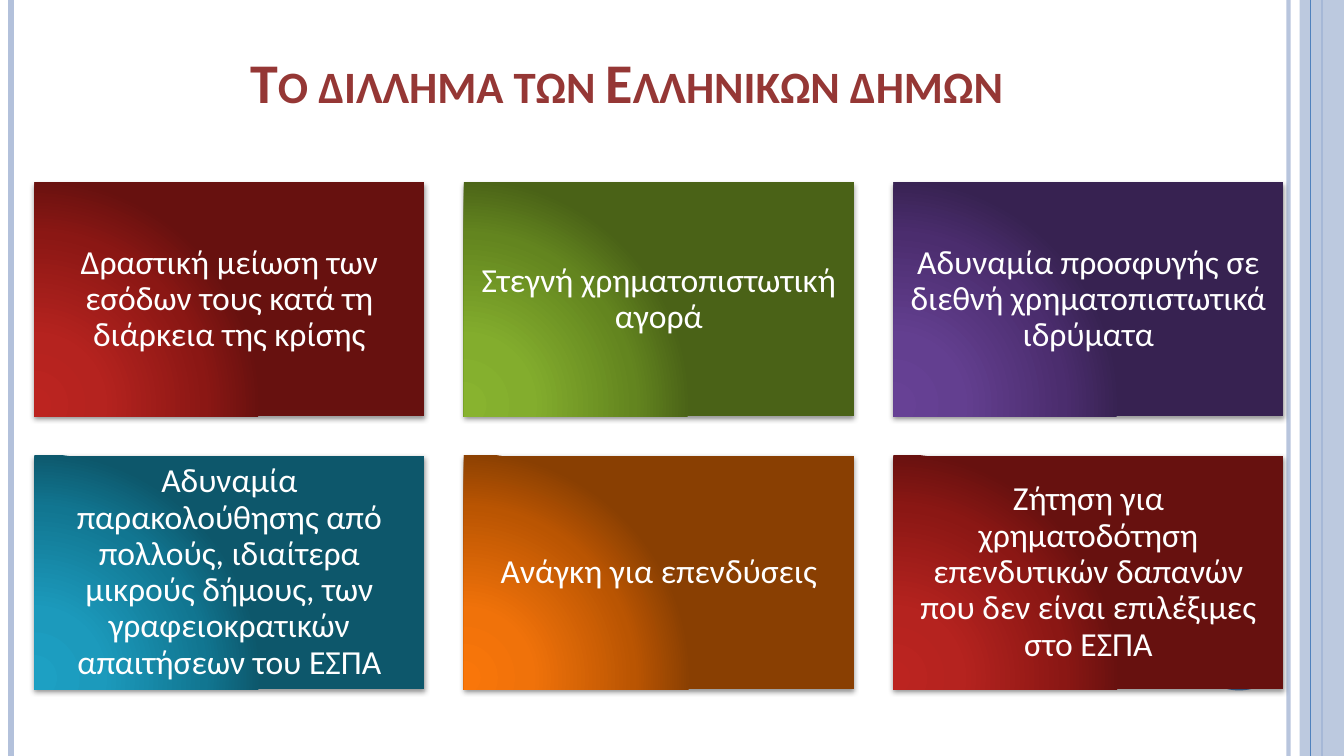
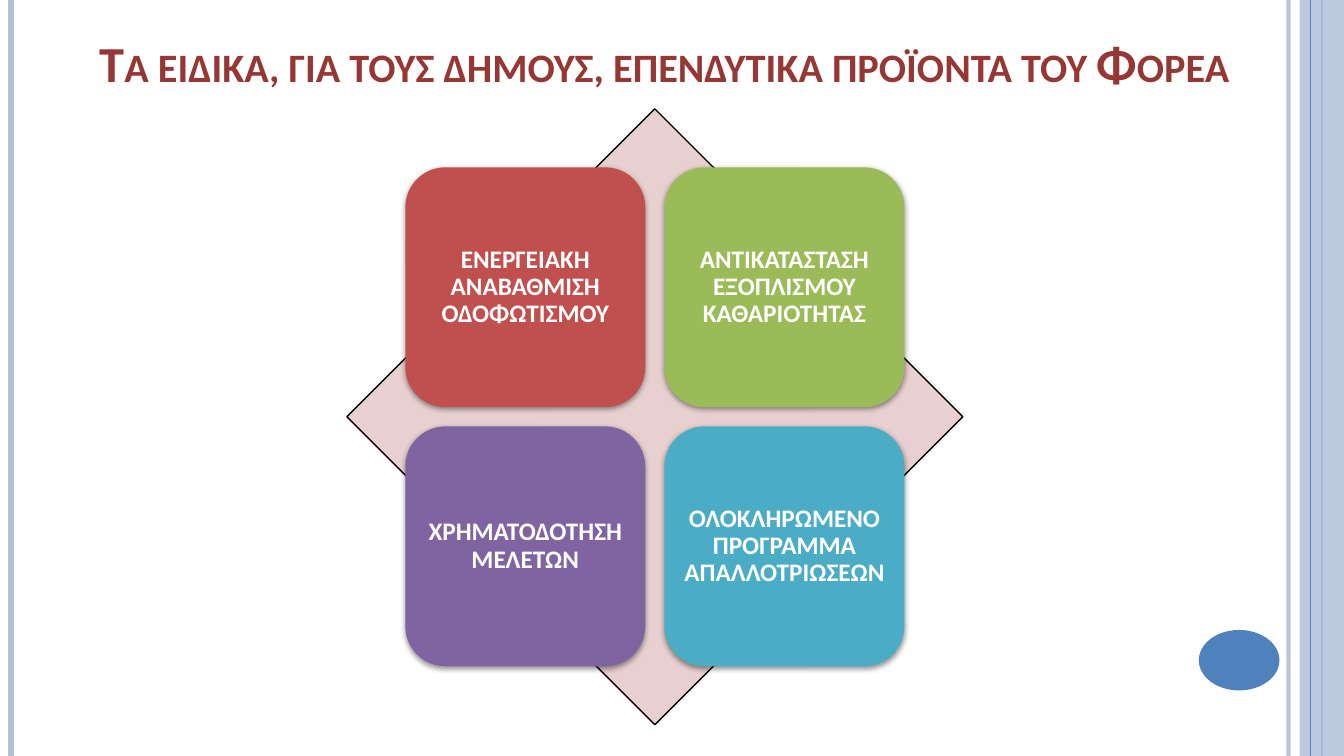
"""Build two slides on the funding needs and tools of Greek towns."""
from dataclasses import dataclass

from lxml.etree import SubElement
from pptx import Presentation
from pptx.dml.color import RGBColor
from pptx.enum.shapes import MSO_CONNECTOR, MSO_SHAPE
from pptx.enum.text import MSO_ANCHOR, PP_ALIGN
from pptx.oxml.ns import qn
from pptx.util import Pt

SCALE = 9144
WIDE, HIGH = 1333, 750
FONT = "Calibri"

WHITE = RGBColor(0xFF, 0xFF, 0xFF)
BLACK = RGBColor(0x00, 0x00, 0x00)
MIST = RGBColor(0xB3, 0xC1, 0xDB)
BLUE = RGBColor(0x4F, 0x81, 0xBD)
WINE = RGBColor(0x95, 0x37, 0x35)
BLUSH = RGBColor(0xE8, 0xD0, 0xD0)
RED = RGBColor(0xC0, 0x50, 0x4D)
GREEN = RGBColor(0x9B, 0xBB, 0x59)
PLUM = RGBColor(0x80, 0x64, 0xA2)
TEAL = RGBColor(0x4B, 0xAC, 0xC6)


def shades(*codes: str) -> tuple[RGBColor, ...]:
    """Turn hex codes into the colours of one blend."""
    return tuple(RGBColor.from_string(code) for code in codes)


STOPS = (0, 30, 75, 100)
DEEP_RED = shades("BC2420", "B5231F", "8B1714", "67110F")
DEEP_GREEN = shades("88B32F", "83AD2D", "63851F", "4A6217")
DEEP_PLUM = shades("674195", "633F90", "4B2D6E", "372251")
DEEP_TEAL = shades("1DA0C3", "1C9ABC", "117691", "0D576B")
AMBER = shades("F9760A", "F0720A", "BA5502", "893F02")


@dataclass(frozen=True)
class Box:
    """A place and size in px."""
    left: int
    top: int
    width: int
    height: int


@dataclass(frozen=True)
class Rule:
    """A line down the full height of the slide."""
    left: int
    color: RGBColor
    weight: float
    alpha: int = 100


@dataclass(frozen=True)
class Card:
    """A filled shape with its text; many colours make a blend."""
    text: str
    colors: tuple[RGBColor, ...]


@dataclass(frozen=True)
class Grid:
    """The rule that places and styles a set of cards."""
    first: Box
    step_x: int
    step_y: int
    cols: int
    kind: MSO_SHAPE
    inset: int
    size: int
    bold: bool


BACK_RULES = (Rule(1278, MIST, 3, 93), Rule(11, MIST, 4.5), Rule(1311, BLUE, 1.5))
FRONT_RULE = Rule(1300, BLUE, 0.75)
BAND = Box(1289, 0, 44, HIGH)
BADGE = Box(1189, 625, 80, 60)

NEEDS = (
    Card("Δραστική μείωση των εσόδων τους κατά τη διάρκεια της κρίσης", DEEP_RED),
    Card("Στεγνή χρηματοπιστωτική αγορά", DEEP_GREEN),
    Card("Αδυναμία προσφυγής σε διεθνή χρηματοπιστωτικά ιδρύματα", DEEP_PLUM),
    Card("Αδυναμία παρακολούθησης από πολλούς, ιδιαίτερα μικρούς δήμους, "
         "των γραφειοκρατικών απαιτήσεων του ΕΣΠΑ", DEEP_TEAL),
    Card("Ανάγκη για επενδύσεις", AMBER),
    Card("Ζήτηση για χρηματοδότηση επενδυτικών δαπανών που δεν είναι "
         "επιλέξιμες στο ΕΣΠΑ", DEEP_RED),
)
TOOLS = (
    Card("ΕΝΕΡΓΕΙΑΚΗ ΑΝΑΒΑΘΜΙΣΗ ΟΔΟΦΩΤΙΣΜΟΥ", (RED,)),
    Card("ΑΝΤΙΚΑΤΑΣΤΑΣΗ ΕΞΟΠΛΙΣΜΟΥ ΚΑΘΑΡΙΟΤΗΤΑΣ", (GREEN,)),
    Card("ΧΡΗΜΑΤΟΔΟΤΗΣΗ ΜΕΛΕΤΩΝ", (PLUM,)),
    Card("ΟΛΟΚΛΗΡΩΜΕΝΟ ΠΡΟΓΡΑΜΜΑ ΑΠΑΛΛΟΤΡΙΩΣΕΩΝ", (TEAL,)),
)
NEED_GRID = Grid(Box(34, 181, 387, 232), 426, 271, 3, MSO_SHAPE.RECTANGLE, 10, 24, False)
TOOL_GRID = Grid(Box(402, 166, 238, 238), 257, 257, 2, MSO_SHAPE.ROUNDED_RECTANGLE, 7, 18, True)


def px(count: int) -> int:
    """Turn px into EMU."""
    return count * SCALE


def place(box: Box) -> tuple[int, int, int, int]:
    """Give the box in EMU."""
    return px(box.left), px(box.top), px(box.width), px(box.height)


def fade(props, alpha: int) -> None:
    """Make the one solid colour below props partly clear."""
    tint = next(props.iter(qn("a:srgbClr")))
    SubElement(tint, qn("a:alpha"), val=str(alpha * 1000))


def add_shape(slide, kind: MSO_SHAPE, box: Box, color: RGBColor | None = None):
    """Add a flat shape without a line."""
    shape = slide.shapes.add_shape(kind, *place(box))
    if color is not None:
        shape.fill.solid()
        shape.fill.fore_color.rgb = color
    shape.line.fill.background()
    shape.shadow.inherit = False
    return shape


def add_rule(slide, rule: Rule) -> None:
    """Draw one upright line."""
    left = px(rule.left)
    line = slide.shapes.add_connector(MSO_CONNECTOR.STRAIGHT, left, 0, left, px(HIGH))
    line.line.color.rgb = rule.color
    line.line.width = Pt(rule.weight)
    props = line._element.spPr
    if rule.alpha < 100:
        fade(props, rule.alpha)
    SubElement(props, qn("a:effectLst"))


def add_blend(shape, colors: tuple[RGBColor, ...]) -> None:
    """Fill the shape with a round blend from its lower left."""
    shape.fill.gradient()
    blend = shape._element.spPr.find(qn("a:gradFill"))
    for child in list(blend):
        blend.remove(child)
    stops = SubElement(blend, qn("a:gsLst"))
    for spot, color in zip(STOPS, colors):
        stop = SubElement(stops, qn("a:gs"), pos=str(spot * 1000))
        SubElement(stop, qn("a:srgbClr"), val=str(color))
    path = SubElement(blend, qn("a:path"), path="circle")
    SubElement(path, qn("a:fillToRect"), l="5000", t="100000", r="120000", b="10000")


def add_shade(shape) -> None:
    """Give the shape a soft shadow below it."""
    effects = shape._element.spPr.find(qn("a:effectLst"))
    shade = SubElement(effects, qn("a:outerShdw"), blurRad=str(Pt(4)),
                       dist=str(Pt(1.6)), dir="5400000", rotWithShape="0")
    tint = SubElement(shade, qn("a:srgbClr"), val=str(BLACK))
    SubElement(tint, qn("a:alpha"), val="42000")


def set_text(frame, text: str, size: int, color: RGBColor, bold: bool):
    """Write one centred paragraph and return its font."""
    frame.text = text
    frame.word_wrap = True
    para = frame.paragraphs[0]
    para.alignment = PP_ALIGN.CENTER
    font = para.runs[0].font
    font.name, font.size, font.bold = FONT, Pt(size), bold
    font.color.rgb = color
    return font


def add_card(slide, card: Card, box: Box, grid: Grid) -> None:
    """Draw one card of a grid."""
    shape = add_shape(slide, grid.kind, box, card.colors[0])
    if len(card.colors) > 1:
        add_blend(shape, card.colors)
    add_shade(shape)
    frame = shape.text_frame
    frame.margin_left = frame.margin_right = px(grid.inset)
    frame.margin_top = frame.margin_bottom = px(grid.inset)
    frame.vertical_anchor = MSO_ANCHOR.MIDDLE
    set_text(frame, card.text, grid.size, WHITE, grid.bold)
    frame.paragraphs[0].line_spacing = 0.9


def add_grid(slide, grid: Grid, cards: tuple[Card, ...]) -> None:
    """Draw the cards row by row."""
    first = grid.first
    for index, card in enumerate(cards):
        row, col = divmod(index, grid.cols)
        box = Box(first.left + col * grid.step_x, first.top + row * grid.step_y,
                  first.width, first.height)
        add_card(slide, card, box, grid)


def add_slide(deck, title: str, box: Box, size: int):
    """Add a slide with the shared frame and a title."""
    slide = deck.slides.add_slide(deck.slide_layouts[6])
    for rule in BACK_RULES:
        add_rule(slide, rule)
    band = add_shape(slide, MSO_SHAPE.RECTANGLE, BAND, MIST)
    fade(band._element.spPr, 87)
    add_rule(slide, FRONT_RULE)
    add_shape(slide, MSO_SHAPE.OVAL, BADGE, BLUE)
    frame = slide.shapes.add_textbox(*place(box)).text_frame
    frame.vertical_anchor = MSO_ANCHOR.BOTTOM
    font = set_text(frame, title, size, WINE, True)
    font._element.set("cap", "small")
    return slide


def main() -> None:
    """Build and save the deck."""
    deck = Presentation()
    deck.slide_width, deck.slide_height = px(WIDE), px(HIGH)

    needs = add_slide(deck, "Το δίλλημα των Ελληνικών δήμων", Box(77, 19, 1089, 100), 40)
    add_grid(needs, NEED_GRID, NEEDS)

    tools = add_slide(deck, "Τα ειδικά, για τους δήμους, επενδυτικά προϊόντα του Φορέα",
                      Box(68, 16, 1182, 81), 36)
    star = add_shape(tools, MSO_SHAPE.DIAMOND, Box(344, 108, 611, 611), BLUSH)
    star.line.color.rgb = BLACK
    star.line.width = Pt(1)
    add_grid(tools, TOOL_GRID, TOOLS)

    deck.save("out.pptx")


if __name__ == "__main__":
    main()
